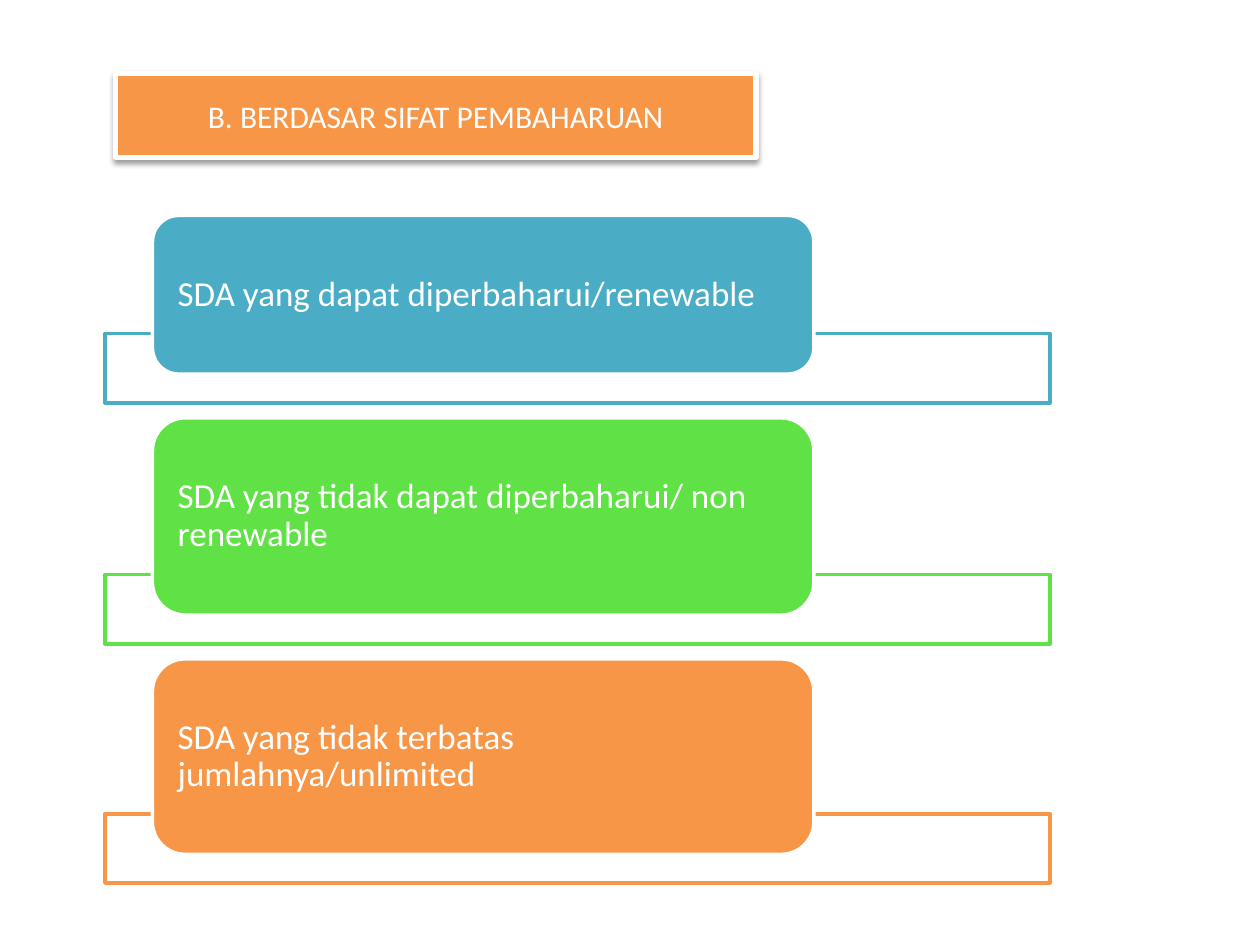
"""Builds a slide that classes natural resources by how they renew."""
from lxml.etree import SubElement
from pptx import Presentation
from pptx.dml.color import RGBColor
from pptx.enum.shapes import MSO_SHAPE as Shape
from pptx.enum.text import MSO_ANCHOR as Anchor, PP_ALIGN as Align
from pptx.oxml.ns import qn
from pptx.util import Pt

COLORS = {"white": "FFFFFF", "black": "000000", "teal": "4BACC6",
          "green": "60E146", "orange": "F79646"}
FONT = "Calibri"
TITLE = "B. BERDASAR SIFAT PEMBAHARUAN"
KINDS = [
    ("SDA yang dapat diperbaharui/renewable", "teal", 90.7),
    ("SDA yang tidak dapat diperbaharui/ non renewable", "green", 112.7),
    ("SDA yang tidak terbatas jumlahnya/unlimited", "orange", 111.7),
]
FIRST_TOP = 123.1
PILL_LEFT, PILL_WIDTH = 87.1, 378
BAR_LEFT, BAR_WIDTH, BAR_HEIGHT = 60, 540, 39.6
OVERLAP, GAP = 23.2, 8.6
TEXT_INSET = 14.4
CORNER_INSET = 0.16667 * 0.29289


def color(name):
    return RGBColor.from_string(COLORS[name])


def add_box(slide, kind, place, fill, line, line_width):
    box = slide.shapes.add_shape(kind, *(Pt(value) for value in place))
    box.shadow.inherit = False
    box.fill.solid()
    box.fill.fore_color.rgb = color(fill)
    box.line.color.rgb = color(line)
    box.line.width = Pt(line_width)
    return box


def write(box, text, size, align):
    frame = box.text_frame
    frame.word_wrap = True
    frame.vertical_anchor = Anchor.MIDDLE
    para = frame.paragraphs[0]
    para.alignment = align
    span = para.add_run()
    span.text = text
    span.font.name = FONT
    span.font.size = Pt(size)
    span.font.color.rgb = color("white")
    return para


def add_shadow(box):
    effects = box._element.spPr.find(qn("a:effectLst"))
    shadow = SubElement(effects, qn("a:outerShdw"), blurRad=str(Pt(3.1)),
                        dist=str(Pt(1.6)), dir="5400000", rotWithShape="0")
    tint = SubElement(shadow, qn("a:srgbClr"), val=COLORS["black"])
    SubElement(tint, qn("a:alpha"), val="38000")


def add_bar(slide, top, line):
    place = (BAR_LEFT, top, BAR_WIDTH, BAR_HEIGHT)
    bar = add_box(slide, Shape.RECTANGLE, place, "white", line, 2)
    tint = bar._element.spPr.find(qn("a:solidFill"))[0]
    SubElement(tint, qn("a:alpha"), val="90000")


def add_pill(slide, top, height, text, fill):
    place = (PILL_LEFT, top, PILL_WIDTH, height)
    pill = add_box(slide, Shape.ROUNDED_RECTANGLE, place, fill, "white", 2)
    frame = pill.text_frame
    frame.margin_left = frame.margin_right = Pt(TEXT_INSET - height * CORNER_INSET)
    frame.margin_top = frame.margin_bottom = 0
    write(pill, text, 20, Align.LEFT).line_spacing = 0.9


def main():
    deck = Presentation()
    deck.slide_width, deck.slide_height = Pt(720), Pt(540)
    page = deck.slides.add_slide(deck.slide_layouts[6])

    title = add_box(page, Shape.RECTANGLE, (66, 42, 366, 48), "orange", "white", 3)
    add_shadow(title)
    write(title, TITLE, 18, Align.CENTER)

    top = FIRST_TOP
    for text, tone, height in KINDS:
        bar_top = top + height - OVERLAP
        add_bar(page, bar_top, tone)
        add_pill(page, top, height, text, tone)
        top = bar_top + BAR_HEIGHT + GAP

    deck.save("out.pptx")


if __name__ == "__main__":
    main()
